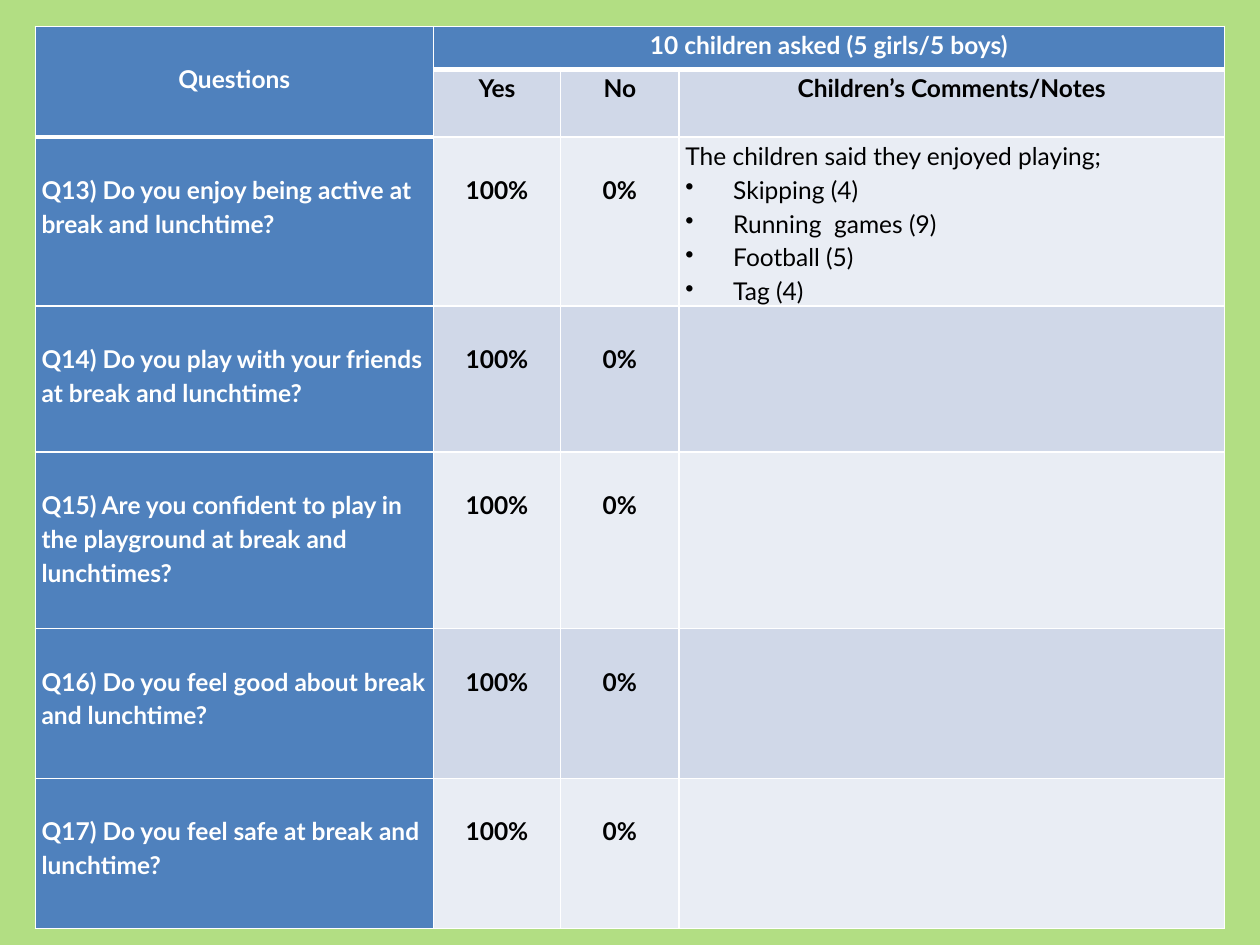
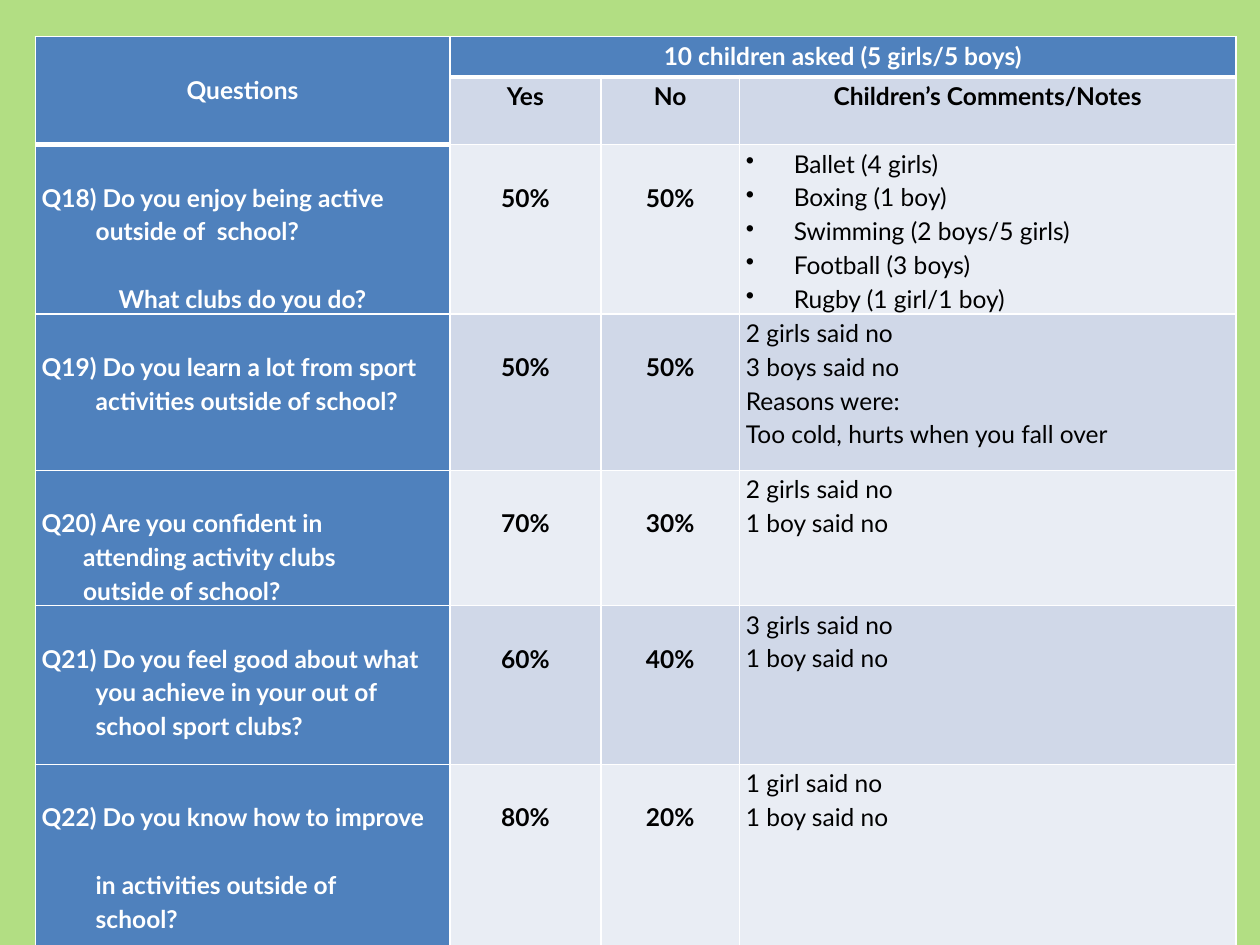
import dataclasses

import lxml.etree
import pptx
import pptx.dml.color
import pptx.enum.text
import pptx.oxml.ns
import pptx.util

Inches, Pt = pptx.util.Inches, pptx.util.Pt
RGB = pptx.dml.color.RGBColor.from_string
qn = pptx.oxml.ns.qn


@dataclasses.dataclass(frozen=True)
class Theme:
    back: str = "B2DE83"
    head: str = "4F81BD"
    bands: tuple = ("D0D8E8", "E9EDF4")
    light: str = "FFFFFF"
    dark: str = "000000"
    font: str = "Lato"
    size: int = 14
    leading: float = 1.15
    line: float = 0.27      # height of one text line, inches
    side: float = 0.05      # left and right cell margin, inches
    thin: int = 1
    heavy: int = 3


T = Theme()
CENTER = pptx.enum.text.PP_ALIGN.CENTER


def write(cell, lines, top=0, color=T.dark, bold=True, align=None):
    """Fill a cell; a line is text, or text with its own indent, bullet, gap or align."""
    cell.margin_top = Inches(top)
    for i, line in enumerate(lines):
        text, own = (line, {}) if isinstance(line, str) else line
        p = cell.text_frame.paragraphs[0] if i == 0 else cell.text_frame.add_paragraph()
        p.alignment = own.get("align", align)
        p.line_spacing = T.leading
        if "gap" in own:
            p.space_before = Inches(own["gap"])
        pPr = p._p.get_or_add_pPr()
        if "indent" in own:
            pPr.set("marL", str(Inches(own["indent"])))
        if "bullet" in own:
            pPr.set("indent", str(-Inches(own["indent"])))
            lxml.etree.SubElement(pPr, qn("a:buChar"), char=own["bullet"])
        r = p.add_run()
        r.text = text
        r.font.name, r.font.size, r.font.bold = T.font, Pt(T.size), bold
        r.font.color.rgb = RGB(color)


def style(cell, row, col):
    """Set margins, white borders (heavy below the header) and the band fill."""
    cell.margin_left = cell.margin_right = Inches(T.side)
    cell.margin_top = cell.margin_bottom = 0
    body_row = 2 if col == 0 else 1
    widths = {"lnL": T.thin, "lnR": T.thin,
              "lnT": T.heavy if row == body_row else T.thin,
              "lnB": T.heavy if row < body_row else T.thin}
    tcPr = cell._tc.get_or_add_tcPr()
    for tag, width in widths.items():
        ln = lxml.etree.SubElement(tcPr, qn("a:" + tag), w=str(Pt(width)))
        fill = lxml.etree.SubElement(ln, qn("a:solidFill"))
        lxml.etree.SubElement(fill, qn("a:srgbClr"), val=T.light)
    cell.fill.solid()
    is_head = row == 0 or col == 0
    cell.fill.fore_color.rgb = RGB(T.head if is_head else T.bands[(row + 1) % 2])


bullet = dict(indent=0.38, bullet="•")
deep = dict(indent=0.43)
shallow = dict(indent=0.33)

# Each question: its lines, the percentage of "yes", the comments
surveys = [
    dict(
        top=0.21, cols=[3.16, 1.01, 0.94, 4.33],
        rows=[0.34, 0.44, 1.27, 1.16, 1.4, 1.19, 1.19],
        questions=[
            (["Q13) Do you enjoy being active at break and lunchtime?"], 100,
             ["The children said they enjoyed playing;", ("Skipping (4)", bullet),
              ("Running  games (9)", bullet), ("Football (5)", bullet), ("Tag (4)", bullet)]),
            (["Q14) Do you play with your friends at break and lunchtime?"], 100, []),
            (["Q15) Are you confident to play in the playground at break and lunchtimes?"],
             100, []),
            (["Q16) Do you feel good about break and lunchtime?"], 100, []),
            (["Q17) Do you feel safe at break and lunchtime?"], 100, []),
        ]),
    dict(
        top=0.29, cols=[3.29, 1.2, 1.1, 3.94],
        rows=[0.32, 0.49, 1.29, 1.24, 1.05, 1.26, 1.61],
        questions=[
            (["Q18) Do you enjoy being active", ("outside of  school?", deep),
              ("What clubs do you do?", dict(align=CENTER, gap=T.line))], 50,
             [("Ballet (4 girls)", bullet), ("Boxing (1 boy)", bullet),
              ("Swimming (2 boys/5 girls)", bullet), ("Football (3 boys)", bullet),
              ("Rugby (1 girl/1 boy)", bullet)]),
            (["Q19) Do you learn a lot from sport", ("activities outside of school?", deep)], 50,
             ["2 girls said no", "3 boys said no", "Reasons were:",
              "Too cold, hurts when you fall over"]),
            (["Q20) Are you confident in", ("attending activity clubs", shallow),
              ("outside of school?", shallow)], 70, ["2 girls said no", "1 boy said no"]),
            (["Q21) Do you feel good about what", ("you achieve in your out of", deep),
              ("school sport clubs?", deep)], 60, ["3 girls said no", "1 boy said no"]),
            (["Q22) Do you know how to improve",
              ("in activities outside of", dict(deep, gap=T.line)), ("school?", deep)], 80,
             ["1 girl said no", "1 boy said no"]),
        ]),
]

prs = pptx.Presentation()
prs.slide_width, prs.slide_height = Inches(10), Inches(7.5)

for survey in surveys:
    s = prs.slides.add_slide(prs.slide_layouts[6])
    s.background.fill.solid()
    s.background.fill.fore_color.rgb = RGB(T.back)

    cols, rows = survey["cols"], survey["rows"]
    table = s.shapes.add_table(len(rows), len(cols), Inches(0.28), Inches(survey["top"]),
                               Inches(sum(cols)), Inches(sum(rows))).table
    table.first_row = table.horz_banding = False
    for col, width in enumerate(cols):
        table.columns[col].width = Inches(width)
    for row, height in enumerate(rows):
        table.rows[row].height = Inches(height)
        for col in range(len(cols)):
            style(table.cell(row, col), row, col)

    table.cell(0, 0).merge(table.cell(1, 0))
    table.cell(0, 1).merge(table.cell(0, 3))
    write(table.cell(0, 0), ["Questions"], top=T.line, color=T.light, align=CENTER)
    write(table.cell(0, 1), ["10 children asked (5 girls/5 boys)"], color=T.light, align=CENTER)
    for col, heading in enumerate(["Yes", "No", "Children’s Comments/Notes"], start=1):
        write(table.cell(1, col), [heading], align=CENTER)

    for row, (question, yes, comments) in enumerate(survey["questions"], start=2):
        write(table.cell(row, 0), question, top=T.line, color=T.light)
        for col, share in enumerate([yes, 100 - yes], start=1):
            write(table.cell(row, col), [f"{share}%"], top=T.line, align=CENTER)
        write(table.cell(row, 3), comments, bold=False)

prs.save("out.pptx")
